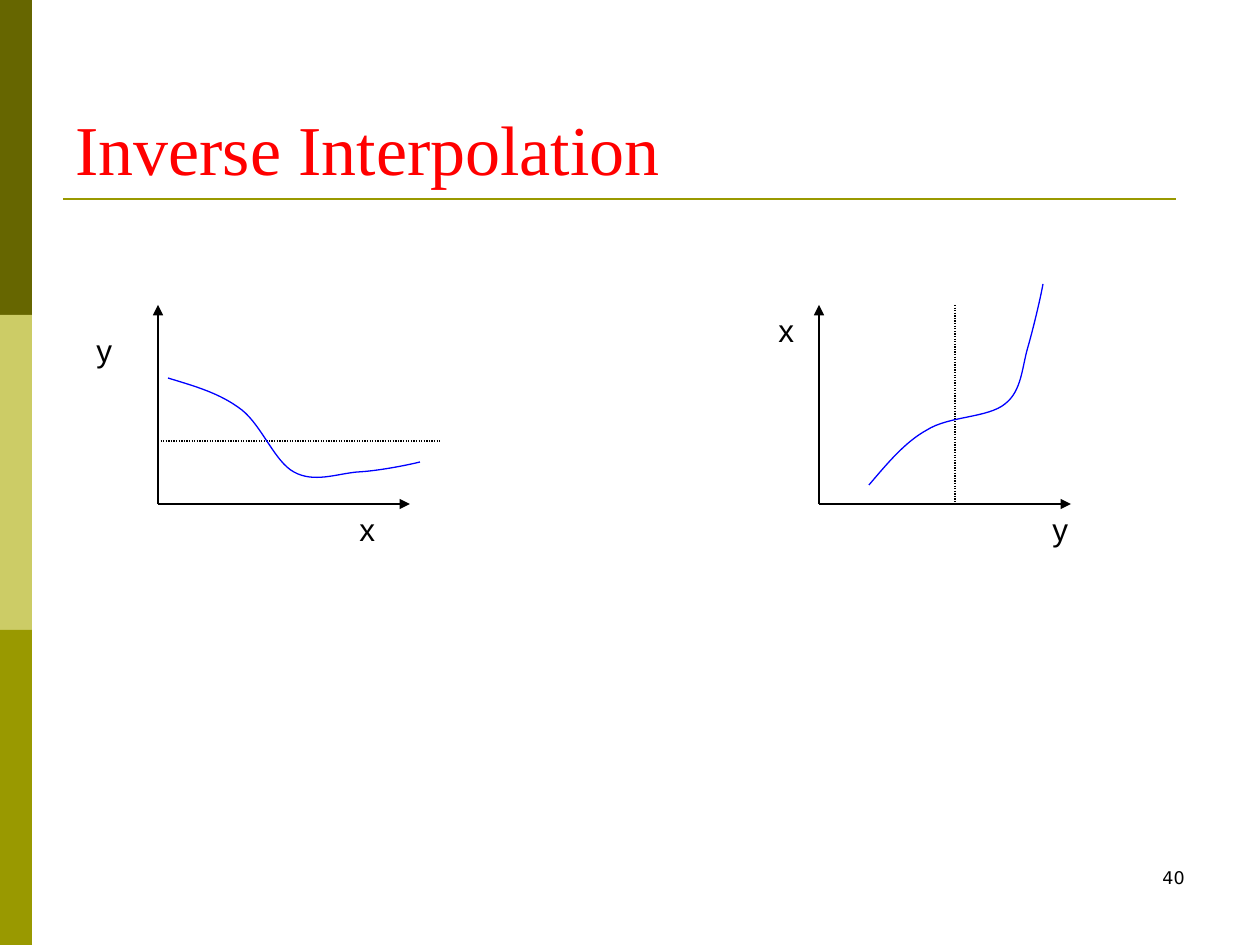
from itertools import chain

from lxml import etree
from pptx import Presentation
from pptx import util as u
from pptx.dml.color import RGBColor
from pptx.enum import dml, shapes, text
from pptx.oxml.ns import qn

SCALE = 914400 / 126
BLACK = RGBColor(0x00, 0x00, 0x00)
RED = RGBColor(0xFF, 0x00, 0x00)
BLUE = RGBColor(0x00, 0x00, 0xFF)
DARK_OLIVE = RGBColor(0x66, 0x66, 0x00)
LIGHT_OLIVE = RGBColor(0xCC, 0xCC, 0x66)
OLIVE = RGBColor(0x99, 0x99, 0x00)

FALLING_CURVE = [
    (10, 73), (36, 81), (62, 88), (84, 105), (104, 121), (117, 157), (136, 167),
    (156, 178), (178, 169), (199, 167), (220, 166), (250, 160), (262, 157),
]
RISING_CURVE = [
    (50, 180), (68, 159), (86, 137), (108, 125), (130, 111), (169, 113), (186, 99),
    (203, 86), (203, 62), (209, 42), (215, 21), (222, -9), (224, -21),
]


def px(n):
    return u.Emu(round(n * SCALE))


def add_line(s, x1, y1, x2, y2, color=BLACK, width=0.75, arrow=False, dotted=False):
    c = s.shapes.add_connector(
        shapes.MSO_CONNECTOR.STRAIGHT, px(x1), px(y1), px(x2), px(y2))
    c.line.color.rgb = color
    c.line.width = u.Pt(width)
    if dotted:
        c.line.dash_style = dml.MSO_LINE.ROUND_DOT
    if arrow:
        etree.SubElement(c.line._get_or_add_ln(), qn("a:tailEnd"), type="triangle")
    etree.SubElement(c._element.spPr, qn("a:effectLst"))


def add_text(s, box, words, size, font, color=BLACK,
             align=text.PP_ALIGN.LEFT, anchor=text.MSO_ANCHOR.TOP):
    tf = s.shapes.add_textbox(*map(px, box)).text_frame
    tf.word_wrap = True
    tf.vertical_anchor = anchor
    p = tf.paragraphs[0]
    p.alignment = align
    r = p.add_run()
    r.text = words
    r.font.size = u.Pt(size)
    r.font.name = font
    r.font.color.rgb = color


def add_curve(s, left, top, points):
    pts = [(px(left + x), px(top + y)) for x, y in points]
    fb = s.shapes.build_freeform(*pts[0], scale=1.0)
    fb.add_line_segments(pts[1:], close=False)
    sp = fb.convert_to_shape()
    sp.shadow.inherit = False
    sp.fill.background()
    sp.line.color.rgb = BLUE
    sp.line.width = u.Pt(0.75)
    path = next(sp._element.iter(qn("a:path")))
    segments = path.findall(qn("a:lnTo"))
    for i in range(0, len(segments), 3):
        bezier = etree.SubElement(path, qn("a:cubicBezTo"))
        for pt in chain.from_iterable(segments[i:i + 3]):
            bezier.append(pt)
    for segment in segments:
        path.remove(segment)


def add_sidebar(s, left, top, width, height):
    colors = (DARK_OLIVE, LIGHT_OLIVE, OLIVE)
    band = height // len(colors)
    for i, color in enumerate(colors):
        sp = s.shapes.add_shape(
            shapes.MSO_SHAPE.RECTANGLE,
            px(left), px(top + i * band), px(width), px(band))
        sp.shadow.inherit = False
        sp.fill.solid()
        sp.fill.fore_color.rgb = color
        sp.line.fill.background()


def add_header(s, left, top, width, height):
    add_text(s, (left, top, width, height), "Inverse Interpolation", 40,
             "Times New Roman", RED, anchor=text.MSO_ANCHOR.BOTTOM)
    rule = top + height + 3
    add_line(s, left, rule, left + width - 21, rule, OLIVE, 1.5)


def add_plot(s, left, top, width, height, curve, labels, level):
    bottom = top + height
    add_line(s, left, bottom, left, top, arrow=True)
    add_line(s, left, bottom, left + width, bottom, arrow=True)
    x1, y1, x2, y2 = level
    add_line(s, left + x1, top + y1, left + x2, top + y2, dotted=True)
    add_curve(s, left, top, curve)
    for name, x, y, w in labels:
        add_text(s, (left + x, top + y, w, 50), name, 18, "Arial")


def add_slide_number(s, left, top, width, height):
    add_text(s, (left, top, width, height), "40", 10, "DejaVu Sans",
             align=text.PP_ALIGN.RIGHT)


def main():
    prs = Presentation()
    prs.slide_width, prs.slide_height = px(1260), px(945)
    s = prs.slides.add_slide(prs.slide_layouts[6])
    add_sidebar(s, 0, 0, 32, 945)
    add_header(s, 63, 38, 1134, 158)
    add_plot(s, 158, 305, 252, 199, FALLING_CURVE,
             [("y", -74, 20, 53), ("x", 189, 199, 73)], (0, 136, 283, 136))
    add_plot(s, 819, 305, 252, 199, RISING_CURVE,
             [("x", -53, 0, 73), ("y", 221, 199, 53)], (136, 0, 136, 199))
    add_slide_number(s, 903, 861, 294, 63)
    prs.save("out.pptx")


if __name__ == "__main__":
    main()
